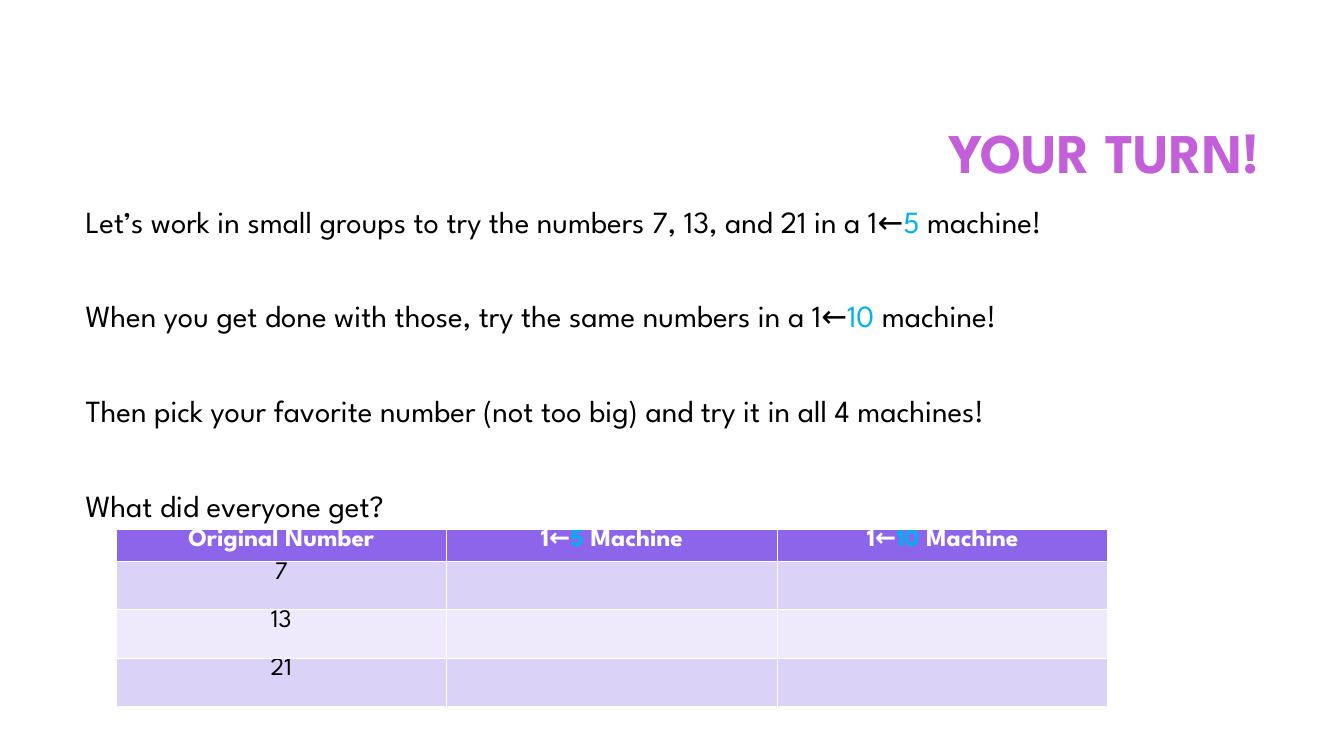
from pptx import Presentation
from pptx.dml.color import RGBColor
from pptx.enum.text import MSO_ANCHOR, PP_ALIGN
from pptx.util import Inches, Pt

# Each text is a list of (words, colour name) runs; None keeps the base colour.
TITLE = [("YOUR TURN!", None)]
STEPS = [
    [("Let’s work in small groups to try the numbers 7, 13, and 21 in a 1←", None),
     ("5", "accent"), (" machine!", None)],
    [("When you get done with those, try the same numbers in a 1←", None),
     ("10", "accent"), (" machine!", None)],
    [("Then pick your favorite number (not too big) and try it in all 4 machines!", None)],
    [("What did everyone get?", None)],
]
HEADS = [
    [("Original Number", None)],
    [("1←", None), ("5", "accent"), (" Machine", None)],
    [("1←", None), ("10", "accent"), (" Machine", None)],
]
NUMBERS = ["7", "13", "21"]

THEME = {
    "font": "League Spartan",
    "title": "C45FDA", "text": "000000", "accent": "00B0F0", "white": "FFFFFF",
    "head": "8D65EA", "bands": ["DBD3F7", "EEEAFB"],
    "title_size": 40, "step_size": 22, "cell_size": 18,
    "step_gap": 44, "spacing": 0.9,
}
LEFT, TOP = 1.15, 5.25
COL, HEAD_ROW, ROW = 3.28, 0.32, 0.48


def rgb(name):
    return RGBColor.from_string(THEME[name])


def write(para, runs, size, color, bold=False, align=PP_ALIGN.LEFT):
    para.alignment = align
    font = para.font
    font.name, font.size, font.bold = THEME["font"], Pt(THEME[size]), bold
    if all(tint is None for _, tint in runs):
        font.color.rgb = rgb(color)
    for words, tint in runs:
        run = para.add_run()
        run.text = words
        if len(runs) > 1:
            run.font.color.rgb = rgb(tint or color)


def add_box(slide, left, top, width, height, anchor):
    box = slide.shapes.add_textbox(Inches(left), Inches(top), Inches(width), Inches(height))
    frame = box.text_frame
    frame.word_wrap = True
    frame.vertical_anchor = anchor
    return frame


def add_title(slide):
    para = add_box(slide, 3.17, 0.84, 9.42, 1.41, MSO_ANCHOR.MIDDLE).paragraphs[0]
    write(para, TITLE, "title_size", "title", True, PP_ALIGN.RIGHT)
    para.line_spacing = THEME["spacing"]


def add_steps(slide):
    frame = add_box(slide, 0.75, 2, 11.83, 5.42, MSO_ANCHOR.TOP)
    for i, runs in enumerate(STEPS):
        para = frame.add_paragraph() if i else frame.paragraphs[0]
        write(para, runs, "step_size", "text")
        para.line_spacing = THEME["spacing"]
        para.space_before = Pt(THEME["step_gap"] if i else 0)


def add_grid(slide):
    rows, cols = len(NUMBERS) + 1, len(HEADS)
    height = HEAD_ROW + ROW * len(NUMBERS)
    grid = slide.shapes.add_table(rows, cols, Inches(LEFT), Inches(TOP),
                                  Inches(COL * cols), Inches(height)).table
    for col in grid.columns:
        col.width = Inches(COL)
    for r, row in enumerate(grid.rows):
        row.height = Inches(ROW if r else HEAD_ROW)
        for c, cell in enumerate(row.cells):
            cell.margin_top = cell.margin_bottom = 0
            cell.fill.solid()
            shade = THEME["bands"][(r - 1) % 2] if r else THEME["head"]
            cell.fill.fore_color.rgb = RGBColor.from_string(shade)
            para = cell.text_frame.paragraphs[0]
            if r == 0:
                write(para, HEADS[c], "cell_size", "white", True, PP_ALIGN.CENTER)
            elif c == 0:
                write(para, [(NUMBERS[r - 1], None)], "cell_size", "text",
                      align=PP_ALIGN.CENTER)


def main():
    deck = Presentation()
    deck.slide_width, deck.slide_height = Inches(13.33), Inches(7.5)
    slide = deck.slides.add_slide(deck.slide_layouts[6])
    add_title(slide)
    add_steps(slide)
    add_grid(slide)
    deck.save("out.pptx")


if __name__ == "__main__":
    main()
